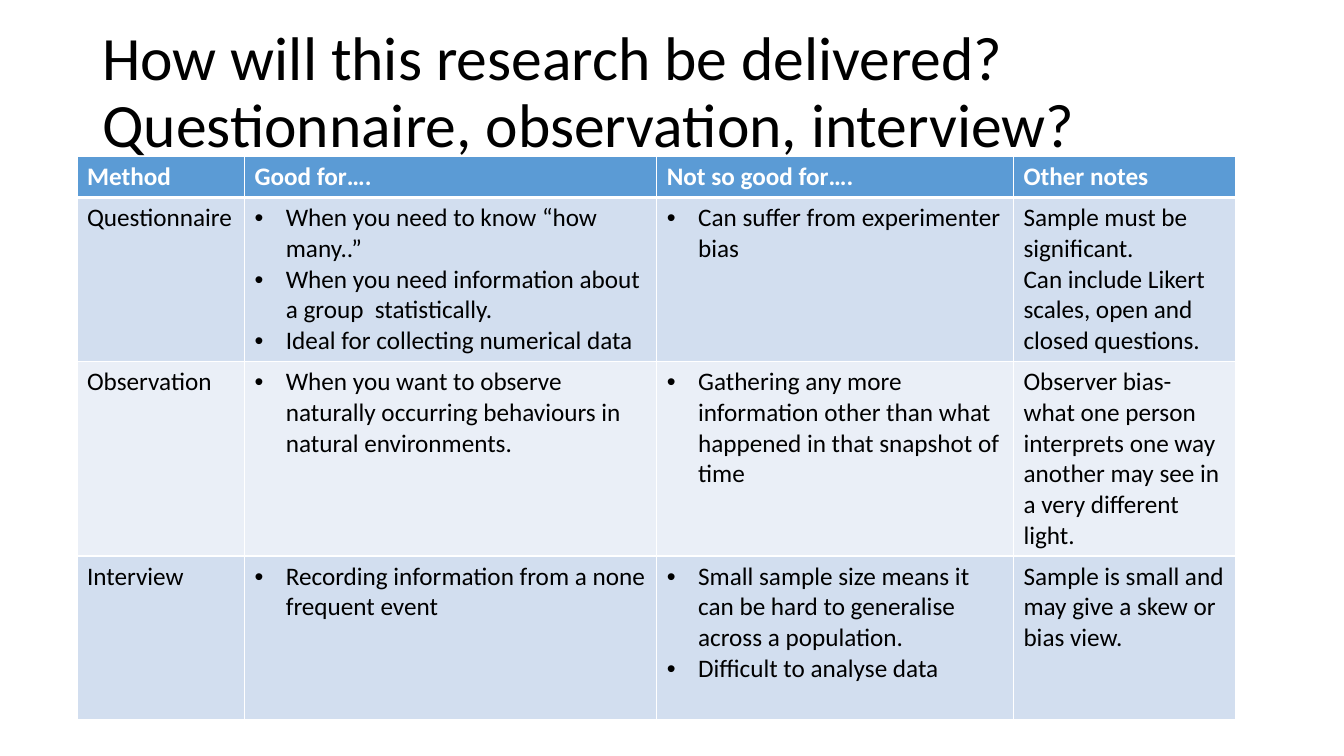
"""Build the slide that compares three research methods in a table."""
import pptx
import pptx.dml.color
import pptx.enum.text
import pptx.oxml
import pptx.oxml.ns
import pptx.util
from pptx.util import Cm

BULLET = "• "
INDENT = Cm(0.79)
COLUMN_WIDTHS = [4.22, 10.39, 8.99, 5.61]
ROW_HEIGHTS = [1.03, 4.13, 4.9, 4.13]
ROW_FILLS = ["5B9BD5", "D2DEEF", "EAEFF7", "D2DEEF"]
ROWS = [
    [["Method"], ["Good for…."], ["Not so good for…."], ["Other notes"]],
    [
        ["Questionnaire"],
        [
            "• When you need to know “how many..”",
            "• When you need information about a group  statistically.",
            "• Ideal for collecting numerical data",
        ],
        ["• Can suffer from experimenter bias"],
        ["Sample must be significant.", "Can include Likert scales, open and closed questions."],
    ],
    [
        ["Observation"],
        ["• When you want to observe naturally occurring behaviours in natural environments."],
        ["• Gathering any more information other than what happened in that snapshot of time"],
        ["Observer bias- what one person interprets one way another may see in a very different light."],
    ],
    [
        ["Interview"],
        ["• Recording information from a none frequent event"],
        [
            "• Small sample size means it can be hard to generalise across a population.",
            "• Difficult to analyse data",
        ],
        ["Sample is small and may give a skew or bias view."],
    ],
]


def color(value):
    """Turn a hex string into a colour."""
    return pptx.dml.color.RGBColor.from_string(value)


def format_font(font, size, value, bold=False):
    """Apply the slide's typeface with a size, colour and weight."""
    settings = {"name": "Calibri", "size": pptx.util.Pt(size), "bold": bold}
    for name, setting in settings.items():
        setattr(font, name, setting)
    font.color.rgb = color(value)


deck = pptx.Presentation()
deck.slide_width, deck.slide_height = Cm(33.87), Cm(19.05)
page = deck.slides.add_slide(deck.slide_layouts[6])

title = page.shapes.add_textbox(Cm(2.33), Cm(0.53), Cm(29.21), Cm(3.68))
frame = title.text_frame
frame.word_wrap = True
frame.vertical_anchor = pptx.enum.text.MSO_ANCHOR.MIDDLE
para = frame.paragraphs[0]
para.text = "How will this research be delivered?\vQuestionnaire, observation, interview?"
para.line_spacing = 0.9
format_font(para.font, 44, "000000")
for span in para.runs:
    format_font(span.font, 44, "000000")

table = page.shapes.add_table(
    len(ROWS), len(COLUMN_WIDTHS), Cm(1.94), Cm(3.95), Cm(sum(COLUMN_WIDTHS)), Cm(sum(ROW_HEIGHTS))
).table
for column, width in zip(table.columns, COLUMN_WIDTHS):
    column.width = Cm(width)

for row_index, row_texts in enumerate(ROWS):
    is_header = row_index == 0
    table.rows[row_index].height = Cm(ROW_HEIGHTS[row_index])
    borders = {
        "lnL": 1,
        "lnR": 1,
        "lnT": 3 if row_index == 1 else 1,
        "lnB": 3 if is_header else 1,
    }
    for column_index, lines in enumerate(row_texts):
        cell = table.cell(row_index, column_index)
        properties = cell._tc.get_or_add_tcPr()
        for edge, points in borders.items():
            properties.append(pptx.oxml.parse_xml(
                f'<a:{edge} {pptx.oxml.ns.nsdecls("a")} w="{pptx.util.Pt(points)}">'
                f'<a:solidFill><a:srgbClr val="FFFFFF"/></a:solidFill></a:{edge}>'
            ))
        cell.fill.solid()
        cell.fill.fore_color.rgb = color(ROW_FILLS[row_index])
        for line_index, line in enumerate(lines):
            frame = cell.text_frame
            para = frame.add_paragraph() if line_index else frame.paragraphs[0]
            span = para.add_run()
            span.text = line.removeprefix(BULLET)
            format_font(span.font, 18, "FFFFFF" if is_header else "000000", is_header)
            if line.startswith(BULLET):
                layout = para._p.get_or_add_pPr()
                layout.set("marL", str(INDENT))
                layout.set("indent", str(-INDENT))
                for tag in ('buFont typeface="Arial"', 'buChar char="•"'):
                    layout.append(pptx.oxml.parse_xml(f'<a:{tag} {pptx.oxml.ns.nsdecls("a")}/>'))

deck.save("out.pptx")
